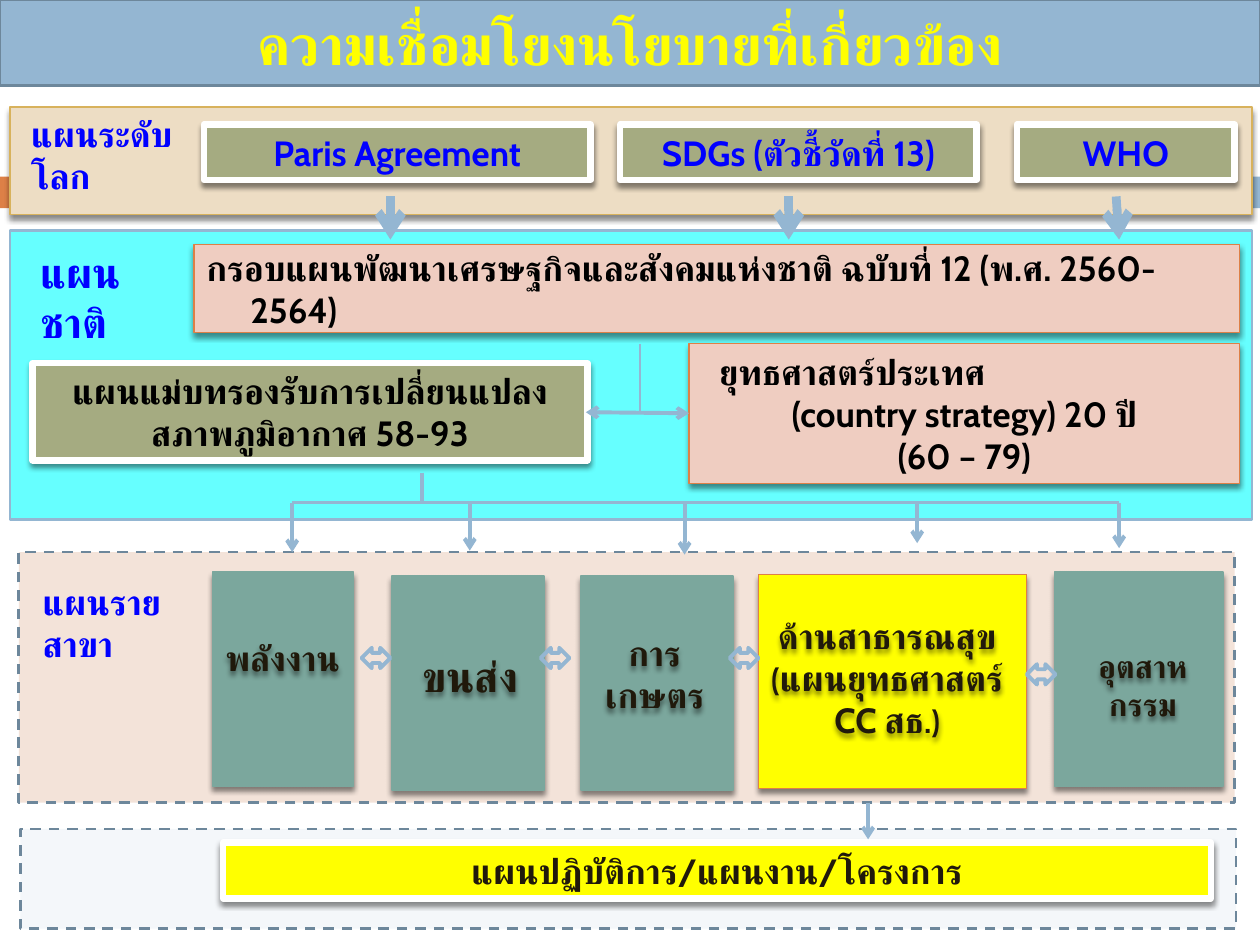
from lxml.etree import SubElement
from pptx import Presentation
from pptx.dml.color import RGBColor
from pptx.enum.dml import MSO_LINE
from pptx.enum.shapes import MSO_CONNECTOR, MSO_SHAPE
from pptx.enum.text import MSO_ANCHOR, MSO_AUTO_SIZE, PP_ALIGN
from pptx.oxml.ns import qn
from pptx.util import Cm, Pt

FONT = "Cabin"
HEX = dict(
    blue="94B6D2", slate="6D879B", orange="DD8047", rust="B95B22", pale="BFD3E4",
    teal="7BA79D", cyan="66FFFF", pink="EFCDC1", olive="A5AB81", sand="EDDDC4",
    gold="D8B25C", yellow="FFFF00", white="FFFFFF", black="000000",
    ink="20190B", link="0000FF",
)

# Content: positions are left, top, width, height in cm
TITLE = "ความเชื่อมโยงนโยบายที่เกี่ยวข้อง"
BARS = [((0, 3.56, 1.47, 0.64), "orange"), ((1.65, 3.56, 23.75, 0.64), "blue")]
SECTORS = [  # box, fill, line, label place, paragraphs, size
    ((4.29, 11.53, 2.84, 4.32), "teal", "teal",
     (3.91, 12.7, 3.58, 1.12), ["พลังงาน"], 20),
    ((7.9, 11.61, 3.07, 4.32), "teal", "teal",
     (8, 12.98, 2.95, 1.27), ["ขนส่ง"], 24),
    ((11.71, 11.61, 3.07, 4.32), "teal", "teal",
     (11.51, 12.6, 3.38, 1.96), ["การ", "เกษตร"], 20),
    ((15.29, 11.58, 5.41, 4.32), "yellow", "orange",
     (15.09, 11.81, 5.59, 3.68),
     ["ด้านสาธารณสุข", [("(", 18), ("แผนยุทธศาสตร์ CC สธ", 20), (".)", 18)]], 20),
    ((21.26, 11.53, 3.4, 4.32), "teal", "teal",
     (21.26, 12.9, 3.56, 1.8), ["อุตสาห กรรม"], 18),
]
LEVELS = [
    ((0.38, 2.13, 4.29, 1.96), "แผนระดับโลก", 20),
    ((0.56, 4.83, 3.33, 2.31), "แผนชาติ", 24),
    ((0.61, 11.56, 3.68, 1.96), "แผนรายสาขา", 20),
]
FRAME = "กรอบแผนพัฒนาเศรษฐกิจและสังคมแห่งชาติ ฉบับที่ 12 (พ.ศ. 2560- 2564)"
CARDS = [  # box, fill, text colour, paragraphs
    ((0.66, 7.32, 11.18, 1.96), "olive", "black",
     ["แผนแม่บทรองรับการเปลี่ยนแปลง", "สภาพภูมิอากาศ 58-93"]),
    ((4.5, 16.99, 19.91, 1.12), "yellow", "ink", ["แผนปฏิบัติการ/แผนงาน/โครงการ"]),
    ((4.11, 2.51, 7.8, 1.12), "olive", "link", ["Paris Agreement"]),
    ((12.5, 2.51, 7.19, 1.12), "olive", "link", ["SDGs (ตัวชี้วัดที่ 13)"]),
    ((20.5, 2.51, 4.39, 1.12), "olive", "link", ["WHO"]),
]
COUNTRY = ["ยุทธศาสตร์ประเทศ", "(country strategy) 20 ปี", "(60 – 79)"]
SWAPS = [(7.29, 13.06), (10.9, 13.06), (14.71, 13.06), (20.7, 13.39)]
BUS = 10.13
DROPS = [(5.89, 11.13), (9.47, 11.1), (13.8, 11.18), (18.49, 10.95), (22.56, 11.05)]
FEEDS = [(7.87, 7.87), (15.9, 15.9), (22.5, 22.56)]

deck = Presentation()
deck.slide_width, deck.slide_height = Cm(25.4), Cm(19.05)
slide = deck.slides.add_slide(deck.slide_layouts[5])
shapes = slide.shapes


def tone(name):
    return RGBColor.from_string(HEX[name])


def write(shape, paras, size=20, color="black", align=PP_ALIGN.CENTER):
    frame = shape.text_frame
    frame.word_wrap = True
    frame.auto_size = MSO_AUTO_SIZE.NONE
    frame.vertical_anchor = MSO_ANCHOR.MIDDLE
    for i, para in enumerate(paras):
        p = frame.add_paragraph() if i else frame.paragraphs[0]
        p.alignment = align
        for text, points in [(para, size)] if isinstance(para, str) else para:
            run = p.add_run()
            run.text = text
            font = run.font
            font.name, font.size, font.bold = FONT, Pt(points), True
            font.color.rgb = tone(color)
            for tag in ("a:ea", "a:cs"):
                SubElement(font._element, qn(tag), typeface=FONT)
    return frame


def shade(shape):
    shape.shadow.inherit = False
    effects = shape._element.spPr.find(qn("a:effectLst"))
    outer = SubElement(effects, qn("a:outerShdw"), blurRad=str(Pt(3)),
                       dist=str(Pt(2.4)), dir="5400000", rotWithShape="0")
    color = SubElement(outer, qn("a:srgbClr"), val=HEX["black"])
    SubElement(color, qn("a:alpha"), val="45000")


def paint(shape, fill=None, line=None, width=0.79, dash=False, alpha=None):
    if fill:
        shape.fill.solid()
        shape.fill.fore_color.rgb = tone(fill)
    else:
        shape.fill.background()
    if alpha:
        color = shape._element.spPr.find(qn("a:solidFill"))[0]
        SubElement(color, qn("a:alpha"), val=str(alpha * 1000))
    if line:
        shape.line.color.rgb = tone(line)
        shape.line.width = Pt(width)
        if dash:
            shape.line.dash_style = MSO_LINE.DASH
    else:
        shape.line.fill.background()


def box(place, fill=None, line=None, kind=MSO_SHAPE.RECTANGLE, shadow=False, **look):
    shape = shapes.add_shape(kind, *map(Cm, place))
    shape.shadow.inherit = False
    paint(shape, fill, line, **look)
    if shadow:
        shade(shape)
    return shape


def label(place, paras, **form):
    text = shapes.add_textbox(*map(Cm, place))
    write(text, paras, **form)
    return text


def link(x1, y1, x2, y2, width=2.25, head=False, tail=False):
    line = shapes.add_connector(MSO_CONNECTOR.STRAIGHT, *map(Cm, (x1, y1, x2, y2)))
    line.line.color.rgb = tone("blue")
    line.line.width = Pt(width)
    for tag, wanted in (("a:headEnd", head), ("a:tailEnd", tail)):
        if wanted:
            SubElement(line.line._get_or_add_ln(), qn(tag), type="arrow")
    SubElement(line._element.spPr, qn("a:effectLst"))


# Title band
title = shapes.title
title.left, title.top, title.width, title.height = map(Cm, (0, 0, 25.4, 1.73))
paint(title, "blue", "slate", width=1.5)
write(title, [TITLE], size=32, color="yellow")

# Bands for each level
for place, fill in BARS:
    box(place, fill)
box((0.2, 2.16, 25.04, 2.16), "sand", "gold", shadow=True)
box((0.2, 4.65, 25.04, 5.82), "cyan", "blue", width=1.5)
box((0.38, 11.13, 24.51, 5.05), "rust", "slate", width=1.5, dash=True, alpha=17)
box((0.41, 16.71, 24.51, 2.01), "pale", "slate", width=1.5, dash=True, alpha=17)
for place, text, size in LEVELS:
    label(place, [text], size=size, color="link", align=PP_ALIGN.LEFT)

# Sector plans
for place, fill, line, spot, paras, size in SECTORS:
    box(place, fill, line, shadow=True)
    shade(label(spot, paras, size=size, color="ink"))
for x, y in SWAPS:
    box((x, y, 0.58, 0.41), line="blue", kind=MSO_SHAPE.LEFT_RIGHT_ARROW, width=2.25)

# National plans and framed cards
plan = box((3.91, 4.93, 21.08, 1.78), "pink", "orange", shadow=True)
first = write(plan, [FRAME], align=PP_ALIGN.LEFT).paragraphs[0]
props = first._p.get_or_add_pPr()
props.set("marL", str(Cm(0.89)))
props.set("indent", str(Cm(-0.89)))
nation = box((13.89, 6.93, 11.1, 2.82), "pink", "orange", shadow=True)
lead = write(nation, COUNTRY).paragraphs[0]
lead.alignment = PP_ALIGN.LEFT
lead._p.get_or_add_pPr().set("marL", str(Cm(0.36)))
for place, fill, color, paras in CARDS:
    write(box(place, fill, "white", width=3.75, shadow=True), paras, color=color)

# Lines and arrows
link(8.51, 9.53, 8.51, BUS)
link(DROPS[0][0], BUS, DROPS[-1][0], BUS)
for x, end in DROPS:
    link(x, BUS, x, end, tail=True)
link(11.81, 8.31, 13.89, 8.33, head=True, tail=True)
link(12.9, 6.93, 12.9, 8.33, width=1.5)
link(17.5, 16.18, 17.5, 16.92, tail=True)
for start, end in FEEDS:
    link(start, 3.96, end, 4.83, width=5, tail=True)

deck.save("out.pptx")
